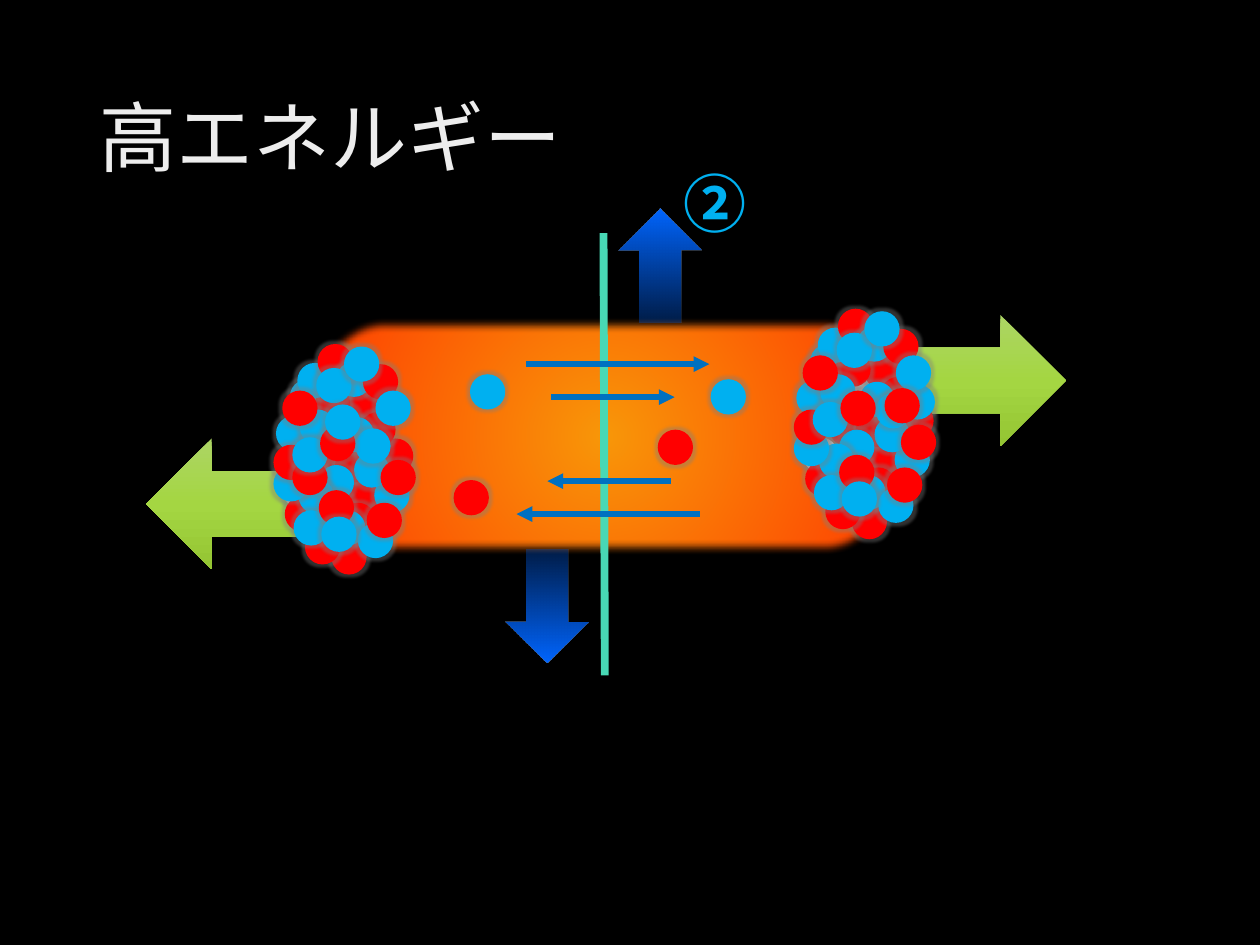
from dataclasses import dataclass
from lxml import etree
from pptx import Presentation, util as u
from pptx.dml.color import RGBColor
from pptx.enum import shapes as sh, text as tx
from pptx.oxml import parse_xml
from pptx.oxml.ns import qn

NS = 'xmlns:a="http://schemas.openxmlformats.org/drawingml/2006/main"'
COLS, ROWS = 10, 7.5


@dataclass(frozen=True)
class Theme:
    back: str = "000000"
    red: str = "FF0000"
    blue: str = "00B0F0"
    grey: str = "D9D9D9"
    halo: str = "7F7F7F"
    axis: str = "48D8B5"
    flow: str = "0070C0"
    head: tuple = ((0, "BFBFBF", 100), (28, "EDEDED", 100), (100, "FFFFFF", 100))
    beam: tuple = ((0, "ACD564", 100), (50, "A4D642", 100), (100, "94C533", 100))
    fire: tuple = ((0, "F89708", 100), (100, "FE3E02", 100))
    push: tuple = ((0, "0066FF", 28), (100, "0066FF", 100))
    font: str = "Calibri"
    sign: str = "Noto Sans CJK JP"
    title: int = 44
    mark: int = 36


T = Theme()

BALLS = [
    ("red", 11, 53), ("red", 28, 81), ("red", 58, 106), ("grey", 39, 53),
    ("grey", 71, 82), ("blue", 80, 106), ("red", 83, 75), ("red", 49, 82),
    ("red", 53, 126), ("blue", 13, 28), ("blue", 64, 86), ("grey", 41, 20),
    ("red", 56, 36), ("red", 69, 54), ("red", 85, 92), ("blue", 2, 57),
    ("grey", 7, 102), ("red", 46, 155), ("red", 33, 34), ("red", 9, 121),
    ("blue", 36, 96), ("blue", 20, 107), ("blue", 21, 52), ("blue", 19, 15),
    ("blue", 0, 97), ("blue", 84, 60), ("red", 25, 147), ("red", 7, 37),
    ("red", 35, 0), ("blue", 45, 132), ("blue", 67, 142), ("blue", 50, 14),
    ("red", 71, 16), ("red", 74, 126), ("red", 0, 80), ("blue", 81, 37),
    ("blue", 16, 132), ("blue", 52, 58), ("red", 15, 92), ("red", 36, 116),
    ("blue", 15, 74), ("blue", 38, 137), ("blue", 65, 67), ("red", 37, 65),
    ("red", 72, 63), ("blue", 34, 19), ("blue", 56, 2), ("blue", 41, 48),
]


def rgb(code):
    return RGBColor.from_string(code)


def grid(*cells):
    return [u.Inches(c) for c in cells]


def blend(stops, turn=None):
    marks = "".join(
        f'<a:gs pos="{pos * 1000}"><a:srgbClr val="{code}">'
        f'<a:alpha val="{alpha * 1000}"/></a:srgbClr></a:gs>'
        for pos, code, alpha in stops)
    if turn is None:
        way = ('<a:path path="circle"><a:fillToRect l="50000" t="50000" '
               'r="50000" b="50000"/></a:path>')
    else:
        way = f'<a:lin ang="{turn * 60000}" scaled="0"/>'
    return parse_xml(f'<a:gradFill {NS} rotWithShape="1"><a:gsLst>{marks}</a:gsLst>'
                     f'{way}</a:gradFill>')


def effect(item, body=""):
    props = item._element.spPr
    for old in props.findall(qn("a:effectLst")):
        props.remove(old)
    props.append(parse_xml(f"<a:effectLst {NS}>{body}</a:effectLst>"))


def block(shapes, kind, box, fill, turn=None, flip=None):
    item = shapes.add_shape(kind, *grid(*box))
    item.shadow.inherit = False
    item.line.fill.background()
    if isinstance(fill, str):
        item.fill.solid()
        item.fill.fore_color.rgb = rgb(fill)
    else:
        item._element.spPr.find(qn("a:prstGeom")).addnext(blend(fill, turn))
    if flip:
        item._element.spPr.find(qn("a:xfrm")).set(flip, "1")
    return item


def wire(shapes, start, end, code, width, tip=False):
    item = shapes.add_connector(sh.MSO_CONNECTOR.STRAIGHT, *grid(*start, *end))
    item.line.color.rgb = rgb(code)
    item.line.width = u.Pt(width)
    if tip:
        etree.SubElement(item.line._get_or_add_ln(), qn("a:tailEnd"), type="triangle")
    effect(item)


def head(slide, box):
    item = slide.shapes.title
    item.left, item.top, item.width, item.height = grid(*box)
    frame = item.text_frame
    frame.text = "高エネルギー"
    frame.vertical_anchor = tx.MSO_ANCHOR.MIDDLE
    para = frame.paragraphs[0]
    para.alignment = tx.PP_ALIGN.LEFT
    para.line_spacing = 0.9
    font = para.runs[0].font
    font.size, font.name = u.Pt(T.title), T.font
    font._element.insert(0, blend(T.head, 80))


def beam(shapes, box, flip=None):
    item = block(shapes, sh.MSO_SHAPE.RIGHT_ARROW, box, T.beam, 90, flip)
    effect(item, '<a:outerShdw blurRad="57150" dist="19050" dir="5400000">'
                 '<a:srgbClr val="000000"><a:alpha val="63000"/></a:srgbClr></a:outerShdw>')


def plasma(shapes, box):
    item = block(shapes, sh.MSO_SHAPE.ROUNDED_RECTANGLE, box, T.fire)
    item.adjustments[0] = 0.27
    effect(item, '<a:softEdge rad="63500"/>')


def cluster(shapes, left, top, stray):
    for name, col, row in BALLS:
        x, y = stray.get((col, row), (left + col / 100, top + row / 100))
        ball = block(shapes, sh.MSO_SHAPE.OVAL, (x, y, 0.28, 0.28), getattr(T, name))
        effect(ball, f'<a:glow rad="40000"><a:srgbClr val="{T.halo}">'
                     '<a:alpha val="40000"/></a:srgbClr></a:glow>')


def flow(shapes, box):
    x, y, w, h = box
    for start, end, row in ((0.05, 1, 0), (0.95, 0, 1), (0.18, 0.82, 0.22), (0.8, 0.16, 0.78)):
        level = y + row * h
        wire(shapes, (x + start * w, level), (x + end * w, level), T.flow, 3, True)


def escape(shapes, box):
    x, y, w, h = box
    group = shapes.add_group_shape().shapes
    size = (0.66, 0.9)
    down = sh.MSO_SHAPE.DOWN_ARROW
    block(group, down, (x + w - 1.13, y + 0.4, *size), T.push, 90, "flipV")
    note = group.add_textbox(*grid(x + w - 0.71, y, 0.71, 0.71))
    frame = note.text_frame
    frame.word_wrap = False
    frame.auto_size = tx.MSO_AUTO_SIZE.SHAPE_TO_FIT_TEXT
    frame.text = "②"
    font = frame.paragraphs[0].runs[0].font
    font.size, font.name, font.bold = u.Pt(T.mark), T.sign, True
    font.color.rgb = rgb(T.blue)
    etree.SubElement(font._element, qn("a:ea"), typeface=T.sign)
    block(group, down, (x, y + h - size[1], *size), T.push, 90)


def main():
    deck = Presentation()
    deck.slide_width, deck.slide_height = grid(COLS, ROWS)
    slide = deck.slides.add_slide(deck.slide_layouts[5])
    slide.background.fill.solid()
    slide.background.fill.fore_color.rgb = rgb(T.back)
    shapes = slide.shapes
    head(slide, (0.69, 0.4, 8.62, 1.45))
    beam(shapes, (7.12, 2.5, 1.34, 1.04))
    beam(shapes, (1.16, 3.48, 1.28, 1.04), "flipH")
    plasma(shapes, (2.5, 2.52, 4.59, 1.88))
    cluster(shapes, 2.17, 2.73, {(84, 60): (3.73, 2.97), (72, 63): (3.6, 3.81)})
    cluster(shapes, 6.3, 2.45, {(15, 92): (5.22, 3.41), (41, 48): (5.64, 3.01)})
    wire(shapes, (4.79, 1.85), (4.8, 5.36), T.axis, 4.5)
    flow(shapes, (4.1, 2.89, 1.53, 1.19))
    escape(shapes, (4.01, 1.26, 2.03, 4))
    deck.save("out.pptx")


if __name__ == "__main__":
    main()
